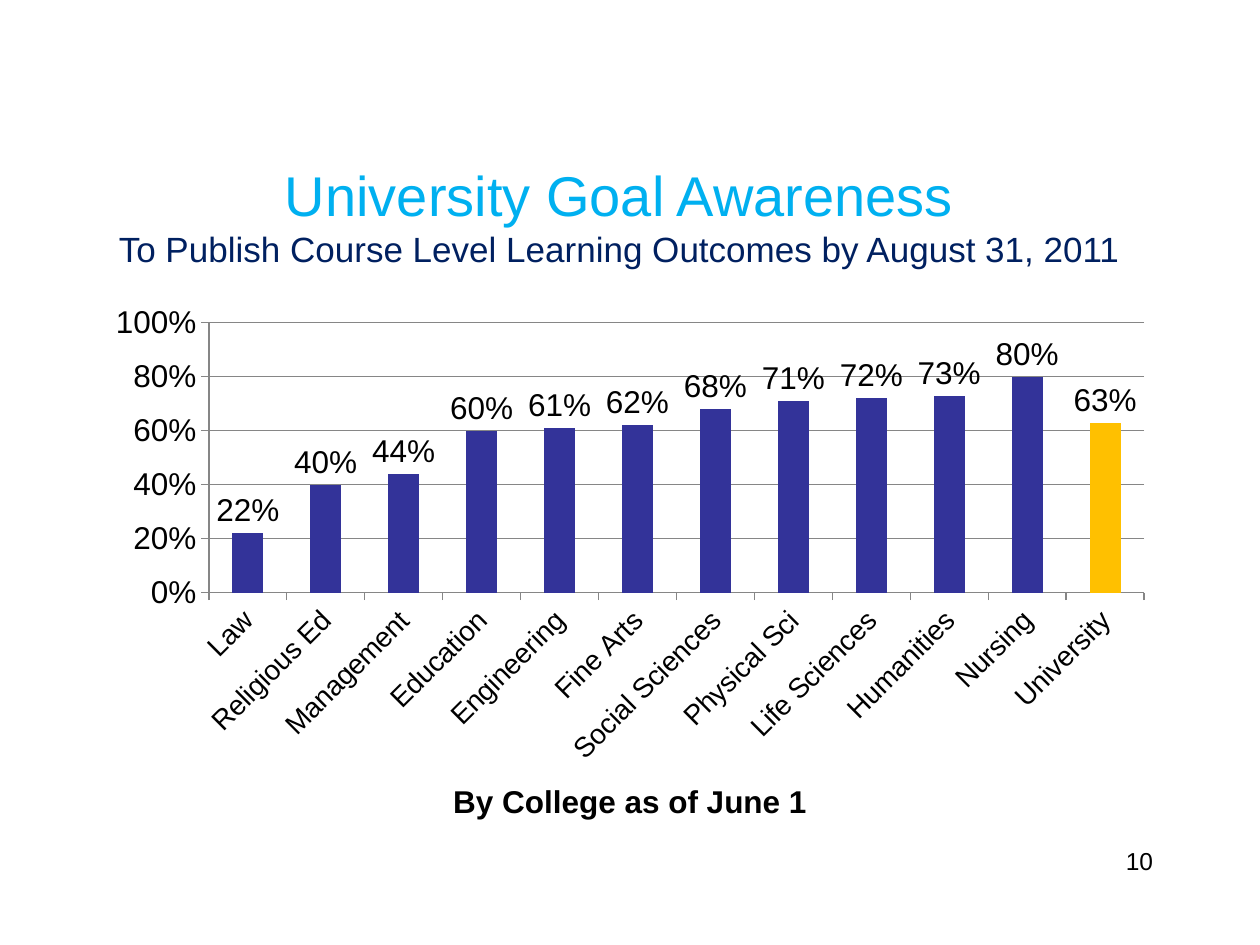
from pptx import Presentation
from pptx.chart.data import CategoryChartData
from pptx.dml.color import RGBColor
from pptx.enum.chart import XL_CHART_TYPE as ChartType, XL_LABEL_POSITION as LabelPos, XL_TICK_MARK as Tick
from pptx.enum.text import MSO_ANCHOR as Anchor, PP_ALIGN as Align
from pptx.oxml.ns import qn
from pptx.util import Pt

COLORS = {
    "title": "00B0F0",
    "subtitle": "002060",
    "text": "000000",
    "college": "333399",
    "university": "FFC000",
    "axis": "868686",
}

AWARENESS = {
    "Law": 0.22,
    "Religious Ed": 0.40,
    "Management": 0.44,
    "Education": 0.60,
    "Engineering": 0.61,
    "Fine Arts": 0.62,
    "Social Sciences": 0.68,
    "Physical Sci": 0.71,
    "Life Sciences": 0.72,
    "Humanities": 0.73,
    "Nursing": 0.80,
    "University": 0.63,
}


class SlideBuilder:
    def __init__(self, slide, face="Arial"):
        self.slide = slide
        self.face = face

    def color(self, key):
        return RGBColor.from_string(COLORS[key])

    def style(self, font, size, key="text", bold=False):
        font.name = self.face
        font.size = Pt(size)
        font.bold = bold
        font.color.rgb = self.color(key)

    def text(self, box, lines, align, anchor=Anchor.TOP):
        frame = self.slide.shapes.add_textbox(*map(Pt, box)).text_frame
        frame.word_wrap = True
        frame.vertical_anchor = anchor
        paragraph = frame.paragraphs[0]
        paragraph.alignment = align
        for index, (words, size, key) in enumerate(lines):
            if index:
                paragraph.add_line_break()
            run = paragraph.add_run()
            run.text = words
            self.style(run.font, size, key)

    def axis(self, axis, size):
        axis.major_tick_mark = Tick.OUTSIDE
        axis.minor_tick_mark = Tick.NONE
        self.style(axis.tick_labels.font, size)
        self.line(axis.format.line)

    def line(self, line):
        line.color.rgb = self.color("axis")
        line.width = Pt(0.75)

    def column_chart(self, box, values, highlight, axis_title):
        data = CategoryChartData(number_format="0%")
        data.categories = list(values)
        data.add_series("Series 1", list(values.values()))
        chart = self.slide.shapes.add_chart(
            ChartType.COLUMN_CLUSTERED, *map(Pt, box), data
        ).chart
        chart.has_legend = False
        chart.has_title = False
        self.style(chart.font, 18)

        colleges = chart.category_axis
        self.axis(colleges, 16)
        colleges.tick_labels.font._element.getroottree()
        body = colleges._element.find(qn("c:txPr")).find(qn("a:bodyPr"))
        body.set("rot", "-2700000")
        body.set("vert", "horz")
        title_run = colleges.axis_title.text_frame.paragraphs[0].add_run()
        title_run.text = axis_title
        self.style(title_run.font, 18, bold=True)

        percent = chart.value_axis
        self.axis(percent, 18)
        percent.minimum_scale = 0
        percent.maximum_scale = 1
        percent.major_unit = 0.2
        percent.tick_labels.number_format = "0%"
        percent.tick_labels.number_format_is_linked = False
        percent.has_major_gridlines = True
        self.line(percent.major_gridlines.format.line)

        plot = chart.plots[0]
        plot.gap_width = 150
        plot.vary_by_categories = False
        plot.has_data_labels = True
        labels = plot.data_labels
        labels.show_value = True
        labels.number_format = "0%"
        labels.number_format_is_linked = False
        labels.position = LabelPos.OUTSIDE_END
        self.style(labels.font, 18)

        series = plot.series[0]
        series.invert_if_negative = False
        total = series.points[list(values).index(highlight)]
        for column, key in ((series, "college"), (total, "university")):
            column.format.fill.solid()
            column.format.fill.fore_color.rgb = self.color(key)


def main():
    deck = Presentation()
    deck.slide_width, deck.slide_height = Pt(720), Pt(540)
    builder = SlideBuilder(deck.slides.add_slide(deck.slide_layouts[6]))
    builder.text(
        (48, 78, 612, 90),
        [
            ("University Goal Awareness", 32, "title"),
            ("To Publish Course Level Learning Outcomes by August 31, 2011", 20, "subtitle"),
        ],
        Align.CENTER,
        Anchor.MIDDLE,
    )
    builder.column_chart((54, 168, 612, 318), AWARENESS, "University", "By College as of June 1")
    builder.text((516, 480, 150, 36), [("10", 14, "text")], Align.RIGHT)
    deck.save("out.pptx")


if __name__ == "__main__":
    main()
